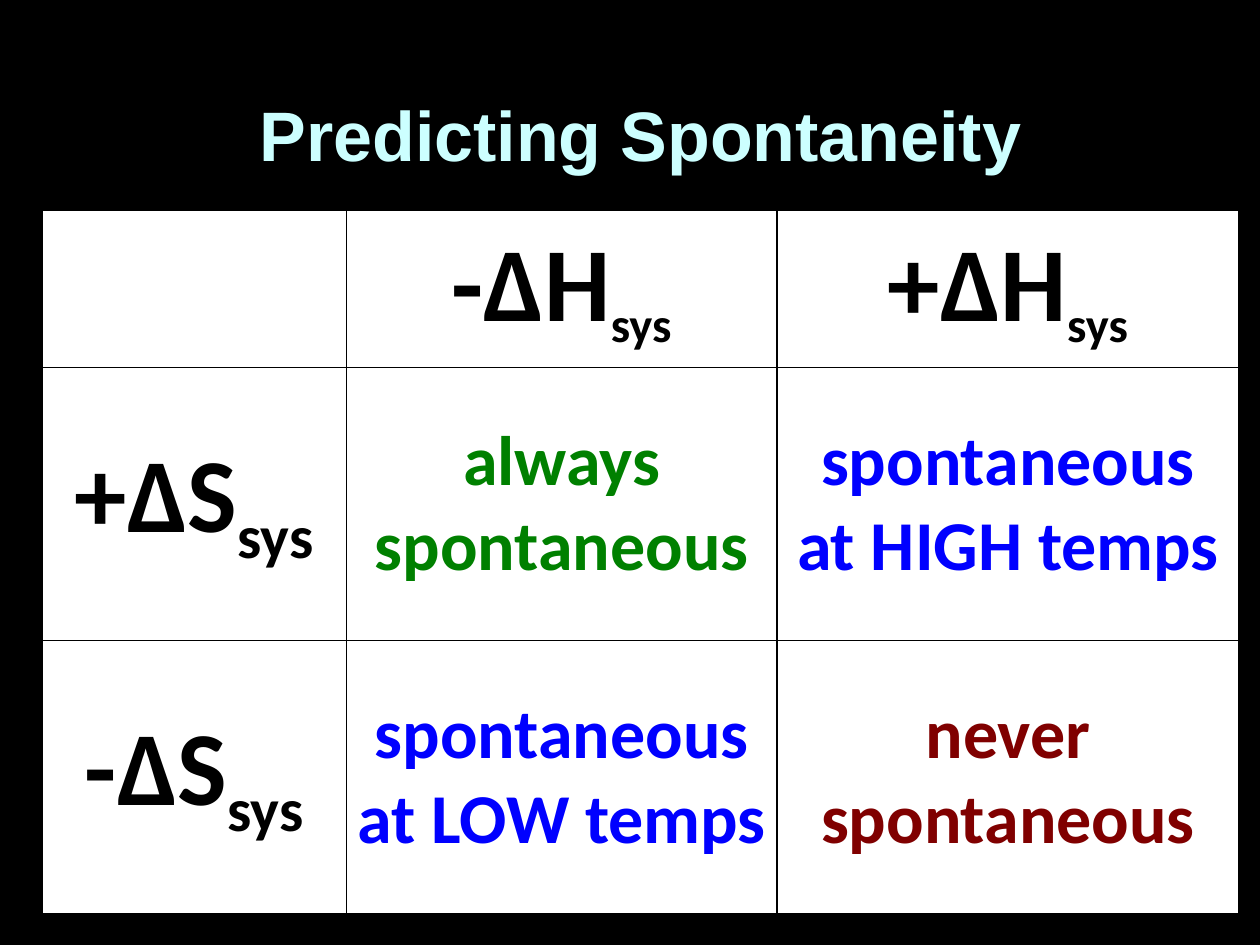
from dataclasses import dataclass

from lxml.etree import SubElement
from pptx import Presentation
from pptx.dml.color import RGBColor as RGB
from pptx.enum.text import MSO_ANCHOR as Anchor, PP_ALIGN as Align
from pptx.oxml.ns import qn
from pptx.util import Emu, Pt

UNIT = 914400 // 120  # 120 px to the inch


@dataclass(frozen=True)
class Theme:
    back: str = "000000"
    paper: str = "FFFFFF"
    ink: str = "000000"
    title: str = "CCFFFF"
    yes: str = "008000"
    some: str = "0000FF"
    no: str = "800000"
    head: str = "Arial"
    body: str = "Calibri"
    big: int = 60
    mid: int = 48
    text: int = 40


THEME = Theme()
COLS = (290, 410, 440)
ROWS = (150, 260, 260)
SIGNS = (("-ΔH", 0, 1, THEME.mid), ("+ΔH", 0, 2, THEME.mid),
         ("+ΔS", 1, 0, THEME.big), ("-ΔS", 2, 0, THEME.big))
CASES = (("always spontaneous", 1, 1, THEME.yes),
         ("spontaneous at HIGH temps", 1, 2, THEME.some),
         ("spontaneous at LOW temps", 2, 1, THEME.some),
         ("never spontaneous", 2, 2, THEME.no))


def px(count):
    return Emu(count * UNIT)


def style(para, face, size, color):
    para.alignment = Align.CENTER
    font = para.font
    font.name, font.size, font.bold = face, Pt(size), True
    font.color.rgb = RGB.from_string(color)


def add_title(slide, text):
    frame = slide.shapes.add_textbox(px(30), px(90), px(1160), px(634)).text_frame
    frame.word_wrap = True
    para = frame.paragraphs[0]
    para.text = text
    para.line_spacing = 0.9
    style(para, THEME.head, THEME.text, THEME.title)


def add_rules(cell):
    """Draw a thin line on each side; must come before the cell's fill."""
    props = cell._tc.get_or_add_tcPr()
    for side in ("lnL", "lnR", "lnT", "lnB"):
        line = SubElement(props, qn(f"a:{side}"), w=str(Pt(1)))
        fill = SubElement(line, qn("a:solidFill"))
        SubElement(fill, qn("a:srgbClr"), val=THEME.ink)


def add_grid(slide):
    frame = slide.shapes.add_table(len(ROWS), len(COLS), px(40), px(200),
                                   px(sum(COLS)), px(sum(ROWS)))
    grid = frame.table
    grid.first_row = grid.horz_banding = False
    for col, width in zip(grid.columns, COLS):
        col.width = px(width)
    for row, height in zip(grid.rows, ROWS):
        row.height = px(height)
    for cell in grid.iter_cells():
        add_rules(cell)
        cell.fill.solid()
        cell.fill.fore_color.rgb = RGB.from_string(THEME.paper)
        cell.vertical_anchor = Anchor.MIDDLE
        cell.margin_left = cell.margin_right = px(8)
        cell.margin_top = cell.margin_bottom = 0
    return grid


def put_text(cell, text, size, color):
    para = cell.text_frame.paragraphs[0]
    para.text = text
    style(para, THEME.body, size, color)
    return para


def put_sign(cell, text, size):
    """Write a symbol with a lowered 'sys' of the given size."""
    para = put_text(cell, text, THEME.big, THEME.ink)
    sub = para.add_run()
    sub.text = "sys"
    sub.font.size = Pt(size)
    sub._r.get_or_add_rPr().set("baseline", "-25000")


def main():
    deck = Presentation()
    deck.slide_width, deck.slide_height = px(1200), px(900)
    slide = deck.slides.add_slide(deck.slide_layouts[6])
    back = slide.background.fill
    back.solid()
    back.fore_color.rgb = RGB.from_string(THEME.back)
    add_title(slide, "Predicting Spontaneity")
    grid = add_grid(slide)
    for text, row, col, size in SIGNS:
        put_sign(grid.cell(row, col), text, size)
    for text, row, col, color in CASES:
        put_text(grid.cell(row, col), text, THEME.text, color)
    deck.save("out.pptx")


if __name__ == "__main__":
    main()
